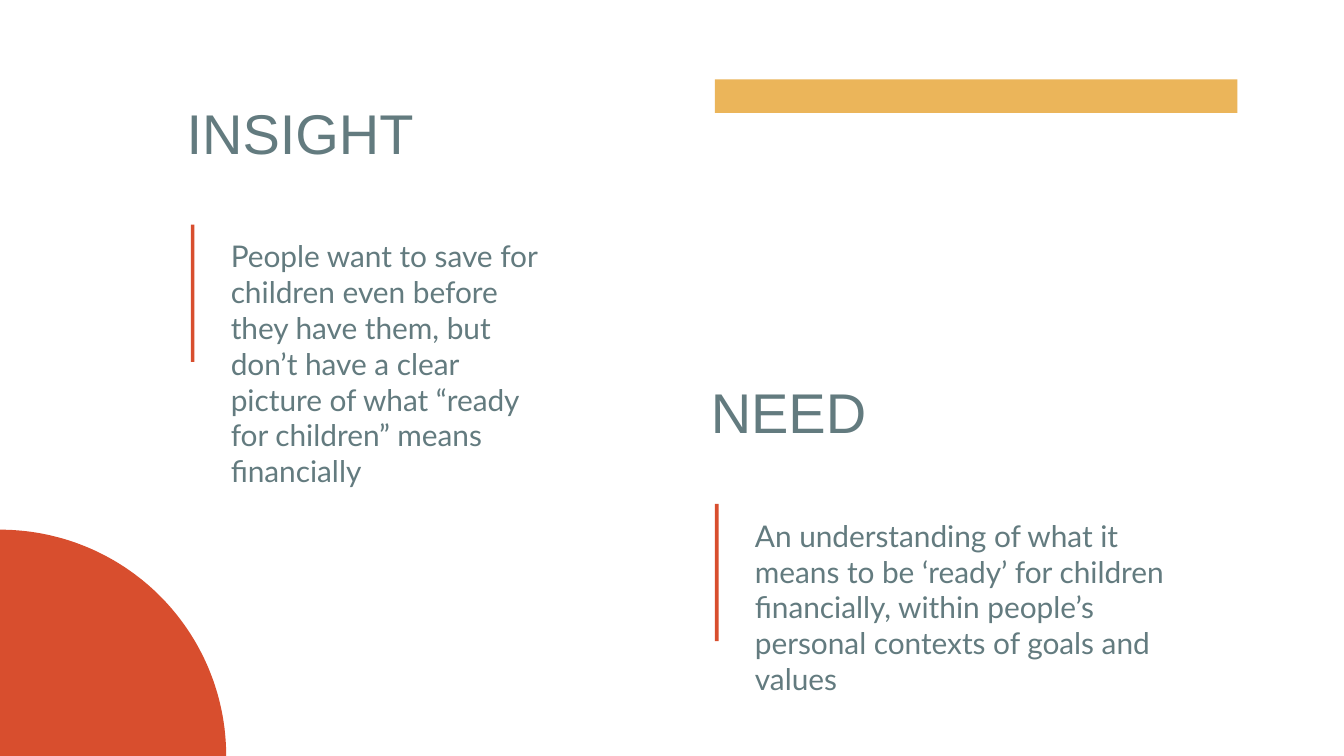
import math
from pptx import Presentation
from pptx import util as u
from pptx.dml.color import RGBColor
from pptx.enum import shapes, text

COLORS = {"slate": "637B7F", "red": "D84E2E", "gold": "EBB55A"}
SECTIONS = [
    {"heading": "INSIGHT", "left": 102.2, "top": 42.5,
     "body_width": 180, "body_height": 149.8,
     "body": "People want to save for children even before they have them, "
             "but don’t have a clear picture of what “ready for children” "
             "means financially"},
    {"heading": "NEED", "left": 383, "top": 192.2,
     "body_width": 247, "body_height": 70.6,
     "body": "An understanding of what it means to be ‘ready’ for children "
             "financially, within people’s personal contexts of goals and values"},
]
SLIDE_WIDTH, SLIDE_HEIGHT = 720, 405
CORNER_RADIUS = 121.2
ARC_STEPS = 90
INSET = 7.2
BODY_DROP = 77.8


def paint(part, color):
    part.shadow.inherit = False
    part.fill.solid()
    part.fill.fore_color.rgb = RGBColor.from_string(COLORS[color])
    part.line.fill.background()


def add_bar(slide, left, top, width, height, color):
    bar = slide.shapes.add_shape(
        shapes.MSO_SHAPE.RECTANGLE,
        u.Pt(left), u.Pt(top), u.Pt(width), u.Pt(height))
    paint(bar, color)


def add_corner(slide):
    arc = []
    for step in range(ARC_STEPS + 1):
        angle = math.pi / 2 * step / ARC_STEPS
        arc.append((u.Pt(CORNER_RADIUS * math.sin(angle)),
                    u.Pt(SLIDE_HEIGHT - CORNER_RADIUS * math.cos(angle))))
    outline = slide.shapes.build_freeform(0, u.Pt(SLIDE_HEIGHT))
    outline.add_line_segments(arc, close=True)
    paint(outline.convert_to_shape(), "red")


def add_text(slide, words, *, left, top, width, height, size, font,
             color="slate", inset_top=INSET, space_after=0):
    box = slide.shapes.add_textbox(
        u.Pt(left), u.Pt(top), u.Pt(width), u.Pt(height))
    frame = box.text_frame
    frame.word_wrap = True
    frame.vertical_anchor = text.MSO_ANCHOR.TOP
    frame.margin_left = frame.margin_right = frame.margin_bottom = u.Pt(INSET)
    frame.margin_top = u.Pt(inset_top)
    paragraph = frame.paragraphs[0]
    paragraph.space_after = u.Pt(space_after)
    run = paragraph.add_run()
    run.text = words
    run.font.size = u.Pt(size)
    run.font.name = font
    run.font.color.rgb = RGBColor.from_string(COLORS[color])


def add_section(slide, section):
    left, top = section["left"], section["top"]
    body_top = top + BODY_DROP
    add_text(slide, section["heading"], left=left - 9.3, top=top,
             width=303, height=45.4, size=30, font="Arial", inset_top=10.2)
    add_text(slide, section["body"], left=left + 14.4, top=body_top,
             width=section["body_width"], height=section["body_height"],
             size=16, font="Lato", space_after=16)
    add_bar(slide, left, body_top, 2, 73.6, "red")


def main():
    deck = Presentation()
    deck.slide_width, deck.slide_height = u.Pt(SLIDE_WIDTH), u.Pt(SLIDE_HEIGHT)
    slide = deck.slides.add_slide(deck.slide_layouts[6])
    add_bar(slide, 383, 42.5, 280, 18, "gold")
    add_corner(slide)
    for section in SECTIONS:
        add_section(slide, section)
    deck.save("out.pptx")


if __name__ == "__main__":
    main()
